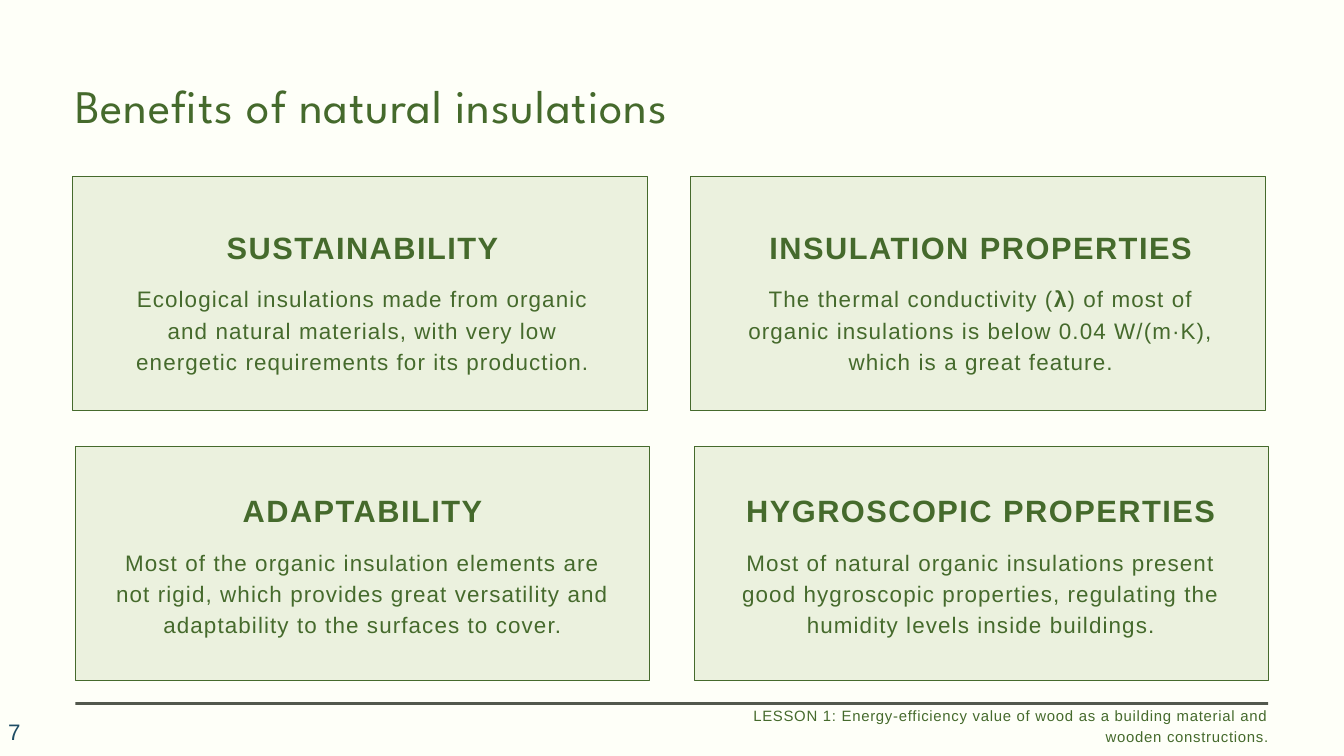
from dataclasses import dataclass

from pptx import Presentation
from pptx.dml.color import RGBColor
from pptx.enum.shapes import MSO_SHAPE as Preset
from pptx.enum.text import MSO_ANCHOR as Anchor, MSO_AUTO_SIZE as AutoSize, PP_ALIGN as Align
from pptx.util import Inches, Pt

COLORS = {
    "background": "FEFFF8",
    "green": "456A2C",
    "card": "EBF1DE",
    "rule": "52584D",
    "number": "1E4D65",
}
CARD_WIDTH, CARD_HEIGHT = 8.55, 3.48
TEXT_WIDTH = 7.39
BODY_OFFSET = 0.8  # from the top of a card heading to the top of its body


@dataclass(frozen=True)
class TextStyle:
    size: float
    tracking: float
    line_spacing: float | None = None
    align: Align = Align.LEFT
    font: str = "Arial"
    color: str = "green"
    bold: bool = False


@dataclass(frozen=True)
class Card:
    left: float
    top: float
    text_left: float
    text_top: float
    heading: str
    body: tuple[str, ...]  # every second part is bold


TITLE = TextStyle(50, 1, 66.8, font="League Spartan")
HEADING = TextStyle(33, 1.6, 41.2, Align.CENTER, bold=True)
BODY = TextStyle(24, 1.2, 33.6, Align.CENTER)
FOOTER = TextStyle(16, 0.8, 22.4, Align.RIGHT)
NUMBER = TextStyle(24, 1.2, color="number")

CARDS = [
    Card(1.08, 2.62, 1.7, 3.38, "SUSTAINABILITY",
         ("Ecological insulations made from organic and natural materials, "
          "with very low energetic requirements for its production.",)),
    Card(10.28, 2.62, 10.9, 3.38, "INSULATION PROPERTIES",
         ("The thermal conductivity (", "λ",
          ") of most of organic insulations is below 0.04 W/(m·K), "
          "which is a great feature.")),
    Card(1.12, 6.64, 1.7, 7.3, "ADAPTABILITY",
         ("Most of the organic insulation elements are not rigid, which provides "
          "great versatility and adaptability to the surfaces to cover.",)),
    Card(10.33, 6.64, 10.9, 7.3, "HYGROSCOPIC PROPERTIES",
         ("Most of natural organic insulations present good hygroscopic properties, "
          "regulating the humidity levels inside buildings.",)),
]


def rgb(name: str) -> RGBColor:
    return RGBColor.from_string(COLORS[name])


def write_text(shape, parts: tuple[str, ...], style: TextStyle) -> None:
    """Fill a shape with one paragraph whose every second part is bold."""
    text_frame = shape.text_frame
    text_frame.word_wrap = True
    text_frame.auto_size = AutoSize.NONE
    text_frame.vertical_anchor = Anchor.TOP
    text_frame.margin_left = text_frame.margin_right = 0
    text_frame.margin_top = text_frame.margin_bottom = 0
    paragraph = text_frame.paragraphs[0]
    paragraph.alignment = style.align
    if style.line_spacing:
        paragraph.line_spacing = Pt(style.line_spacing)
    for index, part in enumerate(parts):
        run = paragraph.add_run()
        run.text = part
        run.font.name = style.font
        run.font.size = Pt(style.size)
        run.font.bold = style.bold or index % 2 == 1
        run.font.color.rgb = rgb(style.color)
        run._r.get_or_add_rPr().set("spc", str(round(style.tracking * 100)))


def add_text(slide, left: float, top: float, width: float, height: float,
             parts: tuple[str, ...], style: TextStyle):
    box = slide.shapes.add_textbox(Inches(left), Inches(top), Inches(width), Inches(height))
    write_text(box, parts, style)
    return box


def add_rectangle(slide, left: float, top: float, width: float, height: float,
                  fill: str, line: str | None = None) -> None:
    shape = slide.shapes.add_shape(
        Preset.RECTANGLE, Inches(left), Inches(top), Inches(width), Inches(height))
    shape.shadow.inherit = False
    shape.fill.solid()
    shape.fill.fore_color.rgb = rgb(fill)
    if line:
        shape.line.color.rgb = rgb(line)
        shape.line.width = Pt(0.75)
    else:
        shape.line.fill.background()


def add_card(slide, card: Card) -> None:
    add_rectangle(slide, card.left, card.top, CARD_WIDTH, CARD_HEIGHT, "card", "green")
    add_text(slide, card.text_left, card.text_top, TEXT_WIDTH, 0.56, (card.heading,), HEADING)
    add_text(slide, card.text_left, card.text_top + BODY_OFFSET, TEXT_WIDTH, 1.4,
             card.body, BODY)


def add_title(slide, text: str) -> None:
    title = slide.shapes.title
    title.left, title.top = Inches(1.12), Inches(1.05)
    title.width, title.height = Inches(12.38), Inches(0.94)
    write_text(title, (text,), TITLE)


def add_footer(slide) -> None:
    add_rectangle(slide, 1.12, 10.45, 17.75, 0.04, "rule")
    number = add_text(slide, 0.12, 10.69, 2.13, 0.4, ("7",), NUMBER)
    number.text_frame.vertical_anchor = Anchor.MIDDLE
    add_text(slide, 10.56, 10.47, 8.32, 0.9,
             ("LESSON 1: Energy-efficiency value of wood as a building material "
              "and wooden constructions.",), FOOTER)


def main() -> None:
    presentation = Presentation()
    presentation.slide_width, presentation.slide_height = Inches(20), Inches(11.25)
    slide = presentation.slides.add_slide(presentation.slide_layouts.get_by_name("Title Only"))
    slide.background.fill.solid()
    slide.background.fill.fore_color.rgb = rgb("background")
    add_title(slide, "Benefits of natural insulations")
    for card in CARDS:
        add_card(slide, card)
    add_footer(slide)
    presentation.save("out.pptx")


if __name__ == "__main__":
    main()
